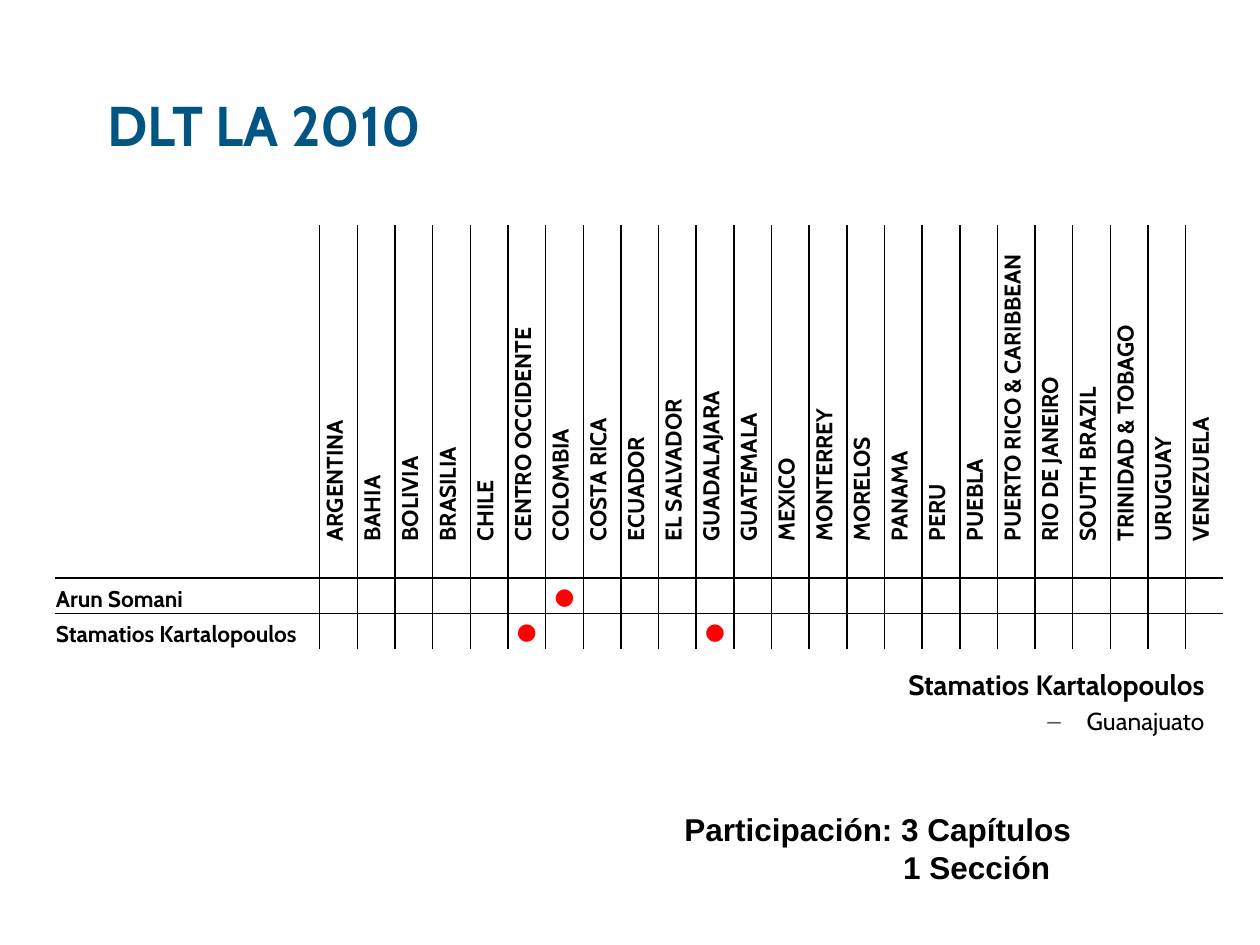
from lxml.etree import SubElement, fromstring
from pptx import Presentation
from pptx.dml.color import RGBColor
from pptx.enum.text import MSO_ANCHOR as ANCHOR, MSO_AUTO_SIZE as FIT, PP_ALIGN as ALIGN
from pptx.oxml.ns import qn
from pptx.util import Pt

COLORS = {"title": "005582", "text": "000000", "mark": "FF0000", "dash": "595959"}
A_NS = "http://schemas.openxmlformats.org/drawingml/2006/main"
SECTIONS = [
    "ARGENTINA", "BAHIA", "BOLIVIA", "BRASILIA", "CHILE", "CENTRO OCCIDENTE",
    "COLOMBIA", "COSTA RICA", "ECUADOR", "EL SALVADOR", "GUADALAJARA", "GUATEMALA",
    "MEXICO", "MONTERREY", "MORELOS", "PANAMA", "PERU", "PUEBLA",
    "PUERTO RICO & CARIBBEAN", "RIO DE JANEIRO", "SOUTH BRAZIL",
    "TRINIDAD & TOBAGO", "URUGUAY", "VENEZUELA",
]
VISITS = {
    "Arun Somani": ["COLOMBIA"],
    "Stamatios Kartalopoulos": ["CENTRO OCCIDENTE", "GUADALAJARA"],
}


def style(p, size, bold=True, color="text", name="Cabin"):
    p.font.size, p.font.bold, p.font.name = Pt(size), bold, name
    p.font.color.rgb = RGBColor.from_string(COLORS[color])


def place(sp, x, y, w, h):
    sp.left, sp.top, sp.width, sp.height = Pt(x), Pt(y), Pt(w), Pt(h)


def set_borders(cell, visible):
    """Draw the named sides in black and hide the others."""
    tc_pr = cell._tc.get_or_add_tcPr()
    for i, side in enumerate("LRTB"):
        paint = (f'<a:solidFill><a:srgbClr val="{COLORS["text"]}"/></a:solidFill>'
                 if side in visible else "<a:noFill/>")
        tc_pr.insert(i, fromstring(
            f'<a:ln{side} xmlns:a="{A_NS}" w="{Pt(1)}">{paint}</a:ln{side}>'))


def fill_cell(cell, text, color="text", align=ALIGN.LEFT, anchor=ANCHOR.BOTTOM):
    cell.fill.background()
    cell.margin_left = cell.margin_right = cell.margin_top = Pt(0.75)
    cell.margin_bottom = 0
    cell.vertical_anchor = anchor
    p = cell.text_frame.paragraphs[0]
    p.alignment = align
    if text:
        p.text = text
    else:
        # Keeps an empty cell from growing its row
        SubElement(p._p, qn("a:endParaRPr"), sz="1300")
    style(p, 13, color=color)


def add_title(s, x, y, w, h):
    sp = s.shapes.title
    place(sp, x, y, w, h)
    tf = sp.text_frame
    tf.text = "DLT LA 2010"
    tf.auto_size, tf.vertical_anchor = FIT.NONE, ANCHOR.TOP
    p = tf.paragraphs[0]
    p.alignment = ALIGN.LEFT
    style(p, 32, color="title")


def add_visits_table(s, x, y, w, h):
    name_w, row_h = 151.5, 20.2
    rows, cols = len(VISITS) + 2, len(SECTIONS) + 1
    table = s.shapes.add_table(rows, cols, Pt(x), Pt(y), Pt(w), Pt(h)).table
    table.first_row = table.horz_banding = False
    for c, col in enumerate(table.columns):
        col.width = Pt((w - name_w) / len(SECTIONS) if c else name_w)
    for r, row in enumerate(table.rows):
        row.height = Pt(row_h if r else h - row_h * (rows - 1))

    # Header row, spacer row, then one row for each lecturer
    names = list(VISITS)
    for r in range(rows):
        for c in range(cols):
            cell = table.cell(r, c)
            if r == 0:
                fill_cell(cell, SECTIONS[c - 1] if c else "")
                if c:
                    cell._tc.get_or_add_tcPr().set("vert", "vert270")
            elif c == 0:
                fill_cell(cell, names[r - 2] if r > 1 else "")
            else:
                visited = r > 1 and SECTIONS[c - 1] in VISITS[names[r - 2]]
                fill_cell(cell, "●" if visited else "", "mark",
                          ALIGN.CENTER, ANCHOR.MIDDLE)
            sides = {"L": c > 0, "R": c < cols - 1, "T": r > 1, "B": 0 < r < rows - 1}
            set_borders(cell, [side for side, shown in sides.items() if shown])


def add_section_note(s, x, y, w, h):
    sp = s.placeholders[1]
    place(sp, x, y, w, h)
    tf = sp.text_frame
    tf.text = "Stamatios Kartalopoulos\nGuanajuato"
    tf.auto_size = FIT.NONE
    lecturer, place_name = tf.paragraphs

    p_pr = lecturer._p.get_or_add_pPr()
    p_pr.set("marL", "0")
    p_pr.set("indent", "0")
    SubElement(p_pr, qn("a:buNone"))
    lecturer.space_before = Pt(0)

    place_name.level = 1
    p_pr = place_name._p.get_or_add_pPr()
    p_pr.set("marL", str(Pt(58.5)))
    p_pr.set("indent", str(Pt(-22.5)))
    SubElement(SubElement(p_pr, qn("a:buClr")), qn("a:srgbClr"), val=COLORS["dash"])
    SubElement(p_pr, qn("a:buChar"), char="–")
    place_name.space_before = Pt(2.8)

    lecturer.alignment = place_name.alignment = ALIGN.RIGHT
    style(lecturer, 16)
    style(place_name, 14, bold=False)


def add_totals(s, x, y, w, h):
    tf = s.shapes.add_textbox(Pt(x), Pt(y), Pt(w), Pt(h)).text_frame
    tf.word_wrap = False
    tf.text = "Participación: 3 Capítulos\n1 Sección"
    # The second count lines up under the first
    tf.paragraphs[1]._p.get_or_add_pPr().set("marL", str(Pt(125)))
    for p in tf.paragraphs:
        p.alignment = ALIGN.LEFT
        style(p, 18, name="Arial")


def main():
    prs = Presentation()
    prs.slide_width, prs.slide_height = Pt(720), Pt(540)
    s = prs.slides.add_slide(prs.slide_layouts[1])
    add_title(s, 54, 48, 612, 90)
    add_visits_table(s, 31.2, 128.7, 668, 242)
    add_section_note(s, 366, 378, 329.5, 60)
    add_totals(s, 384, 459.4, 237.6, 51)
    prs.save("out.pptx")


if __name__ == "__main__":
    main()
